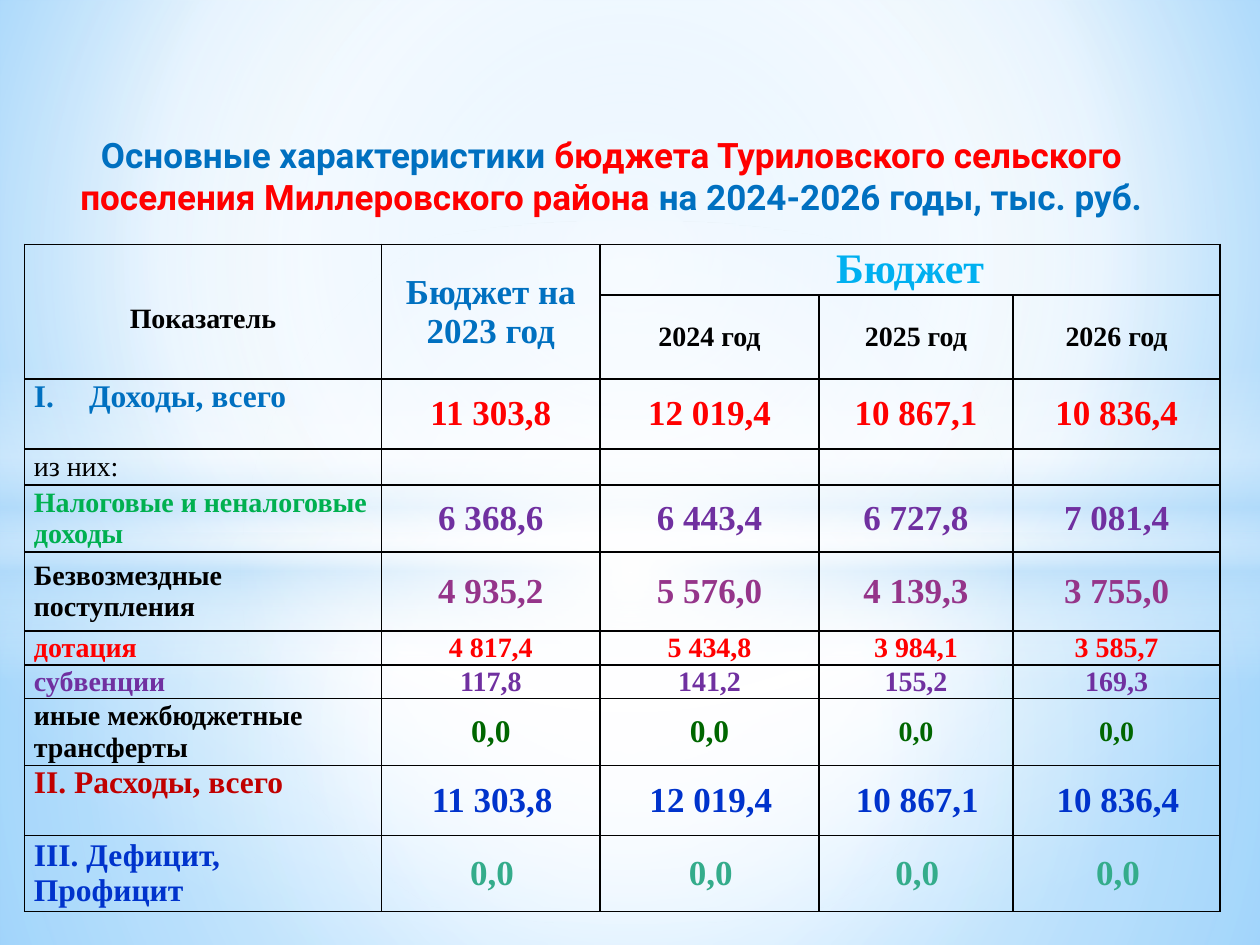
"""Builds the slide with the main budget figures of a rural settlement."""
from dataclasses import dataclass

from pptx import Presentation
from pptx.dml.color import RGBColor
from pptx.enum.shapes import MSO_SHAPE
from pptx.enum.text import MSO_ANCHOR, PP_ALIGN
from pptx.oxml import parse_xml
from pptx.oxml.ns import nsdecls, qn
from pptx.util import Pt


@dataclass(frozen=True)
class Theme:
    title_font: str = "Roboto"
    table_font: str = "Times New Roman"
    black: str = "000000"
    blue: str = "0070C0"
    sky: str = "00B0F0"
    red: str = "FF0000"
    dark_red: str = "C00000"
    green: str = "00B050"
    dark_green: str = "006600"
    teal: str = "34AC8B"
    purple: str = "7030A0"
    plum: str = "95358A"
    royal: str = "0033CC"
    white: str = "FFFFFF"
    pale: str = "B4DCFA"
    glow_inner: str = "9ED5FF"
    glow_outer: str = "5BB9FF"
    small: int = 16
    medium: int = 18
    large: int = 20
    huge: int = 24


THEME = Theme()
CENTER_PATH = '<a:path path="circle"><a:fillToRect l="50000" t="50000" r="50000" b="50000"/></a:path>'
OFFSET_PATH = '<a:path path="circle"><a:fillToRect l="20000" t="10000" r="20000" b="60000"/></a:path>'
DOWNWARD = '<a:lin ang="5400000" scaled="0"/>'


def write(paragraph, text, size=THEME.small, color=THEME.black, font=THEME.table_font,
          bold=True, align=PP_ALIGN.LEFT, indent=0, margin=0, spacing=None, numbering=None):
    paragraph.alignment = align
    properties = paragraph._p.get_or_add_pPr()
    properties.set("marL", str(Pt(margin)))
    properties.set("indent", str(Pt(indent)))
    if spacing:
        paragraph.line_spacing = spacing
    if numbering:
        properties.append(parse_xml(f'<a:buAutoNum {nsdecls("a")} type="{numbering}"/>'))
    if not text:
        paragraph._p.get_or_add_endParaRPr().set("sz", str(size * 100))
        return
    run = paragraph.add_run()
    run.text = text
    run.font.size = Pt(size)
    run.font.name = font
    run.font.bold = bold
    run.font.color.rgb = RGBColor.from_string(color)


class SlideBuilder:
    def __init__(self, presentation, theme):
        self.theme = theme
        self.slide = presentation.slides.add_slide(presentation.slide_layouts[6])

    def gradient(self, fill, element, stops, direction):
        fill.solid()
        solid = element.find(".//" + qn("a:solidFill"))
        stop_list = "".join(
            f'<a:gs pos="{position * 1000}"><a:srgbClr val="{color}">'
            f'<a:alpha val="{opacity * 1000}"/></a:srgbClr></a:gs>'
            for position, color, opacity in stops)
        solid.getparent().replace(solid, parse_xml(
            f'<a:gradFill {nsdecls("a")} rotWithShape="1"><a:gsLst>{stop_list}</a:gsLst>'
            f'{direction}</a:gradFill>'))

    def background(self, stops, direction):
        self.gradient(self.slide.background.fill, self.slide._element, stops, direction)

    def glow(self, kind, top, height, stops, direction=CENTER_PATH):
        shape = self.slide.shapes.add_shape(kind, 0, Pt(top), Pt(720), Pt(height))
        shape.shadow.inherit = False
        shape.line.fill.background()
        self.gradient(shape.fill, shape._element, stops, direction)

    def title(self, left, top, width, height, parts):
        box = self.slide.shapes.add_textbox(Pt(left), Pt(top), Pt(width), Pt(height))
        frame = box.text_frame
        frame.word_wrap = True
        frame.vertical_anchor = MSO_ANCHOR.MIDDLE
        for text, color in parts:
            write(frame.paragraphs[0], text, size=self.theme.large, color=color,
                  font=self.theme.title_font, align=PP_ALIGN.CENTER)

    def table(self, left, top, widths, heights):
        frame = self.slide.shapes.add_table(
            len(heights), len(widths), Pt(left), Pt(top), Pt(sum(widths)), Pt(sum(heights)))
        table = frame.table
        table.first_row = table.horz_banding = False
        for column, width in zip(table.columns, widths):
            column.width = Pt(width)
        for row, height in zip(table.rows, heights):
            row.height = Pt(height)
        for cell in table.iter_cells():
            self.frame_cell(cell)
        return table

    def frame_cell(self, cell):
        properties = cell._tc.get_or_add_tcPr()
        for side in "LRTB":
            properties.append(parse_xml(
                f'<a:ln{side} {nsdecls("a")} w="{Pt(1)}"><a:solidFill>'
                f'<a:srgbClr val="{self.theme.black}"/></a:solidFill></a:ln{side}>'))
        cell.fill.background()
        cell.margin_left = cell.margin_right = Pt(5.4)
        cell.margin_top = cell.margin_bottom = 0

    def cell(self, cell, text, anchor=MSO_ANCHOR.MIDDLE, **text_format):
        cell.vertical_anchor = anchor
        write(cell.text_frame.paragraphs[0], text, **text_format)


def build_background(builder):
    theme = builder.theme
    builder.background([(0, theme.glow_inner, 100), (60, theme.white, 100),
                        (100, theme.glow_outer, 100)], OFFSET_PATH)
    builder.glow(MSO_SHAPE.RECTANGLE, 304.5, 235.5,
                 [(0, theme.white, 91), (37, theme.white, 76), (100, theme.pale, 79)])
    builder.glow(MSO_SHAPE.RECTANGLE, 0, 304.5,
                 [(0, theme.white, 89), (48, theme.white, 62), (100, theme.pale, 79)])
    builder.glow(MSO_SHAPE.RECTANGLE, 209, 180,
                 [(0, theme.white, 0), (29, theme.white, 30), (45, theme.pale, 40),
                  (55, theme.white, 26), (65, theme.pale, 60), (100, theme.white, 0)], DOWNWARD)
    builder.glow(MSO_SHAPE.OVAL, 126, 402, [(0, theme.white, 100), (54, theme.white, 0)])


def build_table(builder):
    theme = builder.theme
    small, medium, large = theme.small, theme.medium, theme.large
    top = {"anchor": MSO_ANCHOR.TOP}
    numbered = {"numbering": "romanUcPeriod", "margin": 31.5, "indent": -31.5}
    rows = [
        ("Доходы, всего", dict(size=medium, color=theme.blue, **top, **numbered),
         ("11 303,8", "12 019,4", "10 867,1", "10 836,4"), theme.red, [large] * 4, -5),
        ("из них:", dict(bold=False), ("",) * 4, theme.black, [small] * 4, 0),
        ("Налоговые и неналоговые доходы", dict(color=theme.green),
         ("6 368,6", "6 443,4", "6 727,8", "7 081,4"), theme.purple, [large] * 4, -5),
        ("Безвозмездные поступления", {},
         ("4 935,2", "5 576,0", "4 139,3", "3 755,0"), theme.plum, [large] * 4, -5),
        ("дотация", dict(color=theme.red),
         ("4 817,4", "5 434,8", "3 984,1", "3 585,7"), theme.red, [small] * 4, -5),
        ("субвенции", dict(color=theme.purple),
         ("117,8", "141,2", "155,2", "169,3"), theme.purple, [small] * 4, -5),
        ("иные межбюджетные трансферты", {},
         ("0,0",) * 4, theme.dark_green, [medium, medium, small, small], -5),
        ("II. Расходы, всего", dict(size=medium, color=theme.dark_red, **top),
         ("11 303,8", "12 019,4", "10 867,1", "10 836,4"), theme.royal, [large] * 4, 1.5),
        ("III. Дефицит, Профицит", dict(size=medium, color=theme.royal),
         ("0,0",) * 4, theme.teal, [large] * 4, 1.5),
    ]
    table = builder.table(14, 139.7, [204, 125, 125, 111, 118.3],
                          [26.5, 44.2, 40, 20.5, 35.8, 45.2, 17.8, 18, 35.5, 40, 40])
    for column in (0, 1):
        table.cell(0, column).merge(table.cell(1, column))
    table.cell(0, 2).merge(table.cell(0, 4))

    center = {"align": PP_ALIGN.CENTER}
    builder.cell(table.cell(0, 0), "Показатель", indent=-5, spacing=1.5, **center)
    builder.cell(table.cell(0, 1), "Бюджет на 2023 год", size=large, color=theme.blue, **center)
    builder.cell(table.cell(0, 2), "Бюджет", size=theme.huge, color=theme.sky, **center)
    for column, year in enumerate((2024, 2025, 2026), start=2):
        builder.cell(table.cell(1, column), f"{year} год", **center)
    for row, (label, label_format, values, color, sizes, indent) in enumerate(rows, start=2):
        builder.cell(table.cell(row, 0), label, **label_format)
        for column, (value, size) in enumerate(zip(values, sizes), start=1):
            builder.cell(table.cell(row, column), value, size=size, color=color,
                         indent=indent, **center)


def main():
    presentation = Presentation()
    presentation.slide_width, presentation.slide_height = Pt(720), Pt(540)
    builder = SlideBuilder(presentation, THEME)
    build_background(builder)
    builder.title(14.4, 55, 670, 91, [
        ("Основные характеристики ", THEME.blue),
        ("бюджета Туриловского сельского поселения Миллеровского района ", THEME.red),
        ("на 2024-2026 годы, тыс. руб.", THEME.blue)])
    build_table(builder)
    presentation.save("out.pptx")


if __name__ == "__main__":
    main()
